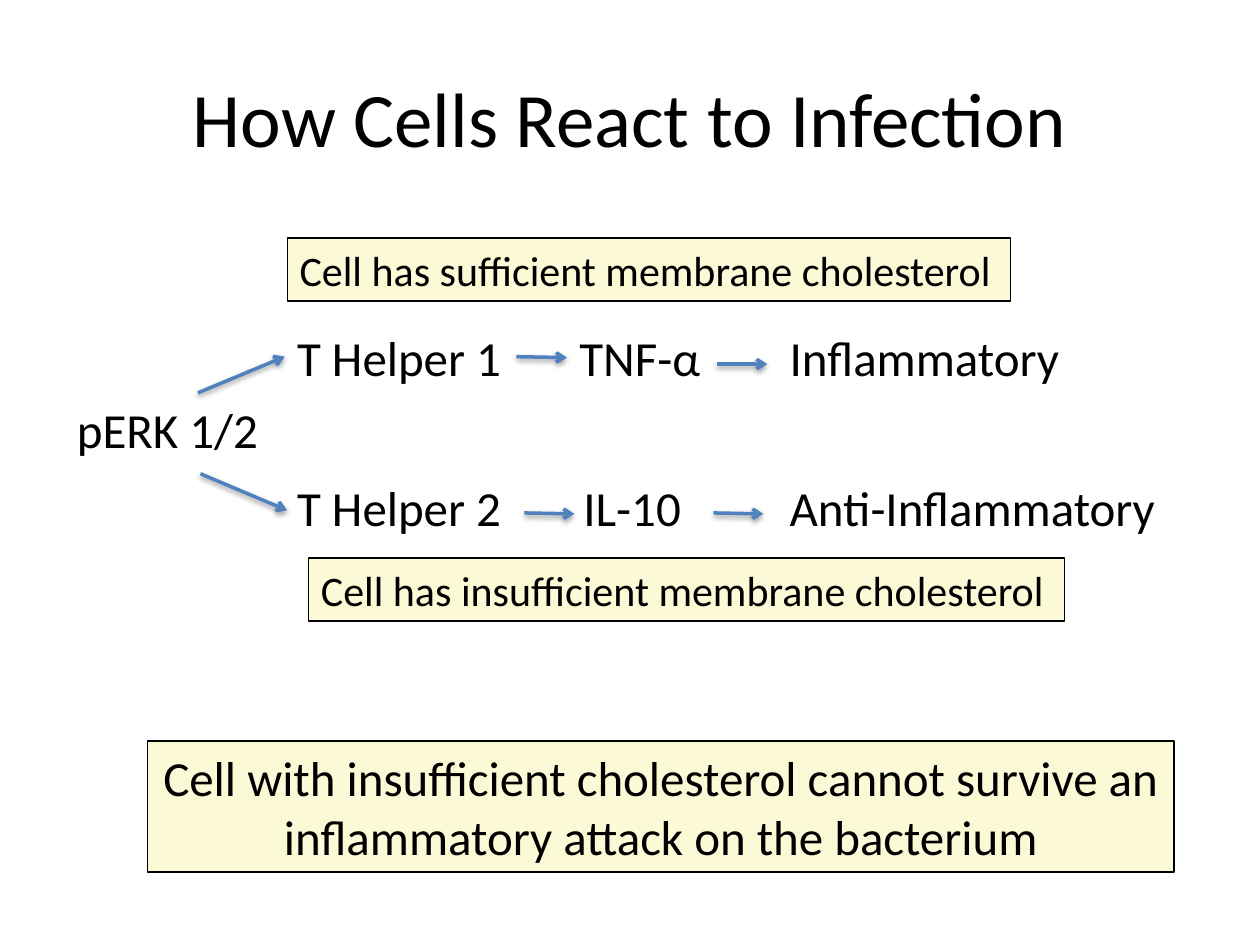
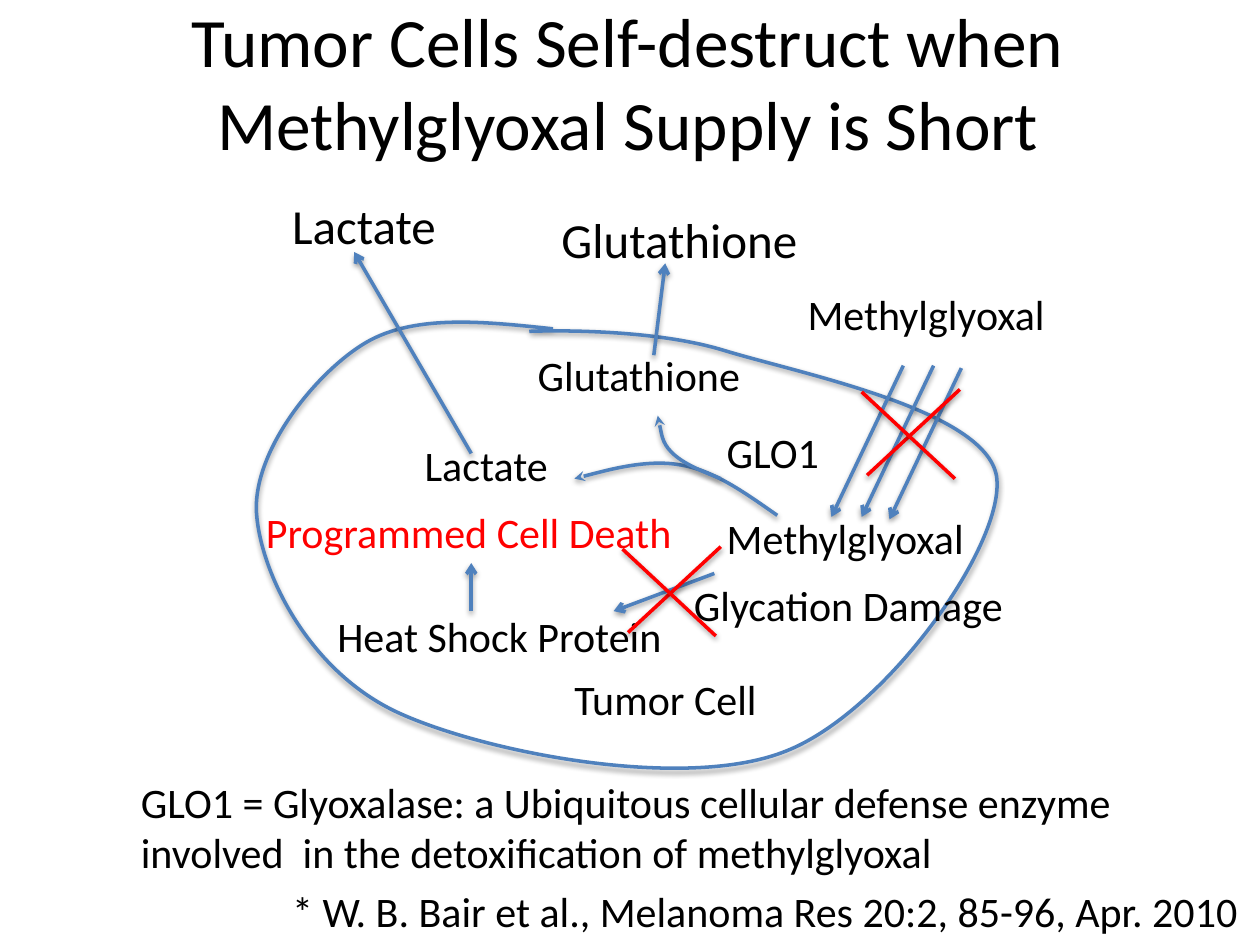
from lxml import etree
from pptx import Presentation
from pptx import util as u
from pptx.dml.color import RGBColor
from pptx.enum import shapes, text
from pptx.oxml.ns import qn

COLOURS = {"text": "000000", "stroke": "4F81BD", "alert": "FF0000", "note": "FCF9D6"}
FONT = "Calibri"
LABEL, LARGE = 24, 28
LABEL_HEIGHT, LARGE_HEIGHT = 1.27, 1.45


def write(frame, words, size, colour="text", align=text.PP_ALIGN.LEFT):
    """Add words as one formatted run to the first paragraph of a text frame."""
    paragraph = frame.paragraphs[0]
    paragraph.alignment = align
    run = paragraph.add_run()
    run.text = words
    run.font.name = FONT
    run.font.size = u.Pt(size)
    run.font.color.rgb = RGBColor.from_string(COLOURS[colour])
    return run


def style_stroke(shape, colour="stroke", arrowhead=None):
    """Format a connector or curve; its soft shadow comes from the theme."""
    shape.line.color.rgb = RGBColor.from_string(COLOURS[colour])
    shape.line.width = u.Pt(2)
    shape.element.find(".//" + qn("a:effectRef")).set("idx", "1")
    if arrowhead:
        outline = shape.element.find(".//" + qn("a:ln"))
        etree.SubElement(outline, qn("a:tailEnd"), type=arrowhead)


presentation = Presentation()
presentation.slide_width, presentation.slide_height = u.Cm(25.4), u.Cm(19.05)
title_only = presentation.slide_layouts[5]

# Titles: words, size, (left, top, width, height)
titles = [
    ("How Cells React to Infection", 44, (1.27, 0.76, 22.86, 3.18)),
    ("Tumor Cells Self-destruct when Methylglyoxal Supply is Short", 39.6,
     (2.59, 0.05, 20.14, 3.18)),
]
for words, size, box in titles:
    title = presentation.slides.add_slide(title_only).shapes.title
    title.left, title.top, title.width, title.height = map(u.Cm, box)
    title.text_frame.vertical_anchor = text.MSO_ANCHOR.MIDDLE
    write(title.text_frame, words, size, align=text.PP_ALIGN.CENTER)
infection, tumor = presentation.slides

# Membrane and enzyme curves: a start, then three Bézier points per segment
curves = [
    (None, [(11.15, 6.63),
            (9.73, 6.48), (8.28, 6.32), (7.29, 6.96),
            (6.3, 7.59), (5.03, 9.19), (5.18, 10.44),
            (5.31, 11.68), (6.3, 13.61), (8.1, 14.4),
            (9.88, 15.19), (13.84, 15.95), (15.85, 15.14),
            (17.86, 14.35), (20.29, 10.95), (20.09, 9.6),
            (19.86, 8.26), (16.15, 7.54), (14.58, 7.06),
            (13, 6.58), (10.67, 6.68), (10.67, 6.68)]),
    ("stealth", [(15.67, 10.39),
                 (15.01, 9.93), (14.38, 9.47), (13.69, 9.37),
                 (13, 9.25), (11.58, 9.65), (11.58, 9.65)]),
    ("stealth", [(14.53, 9.65),
                 (14.15, 9.5), (13.77, 9.35), (13.54, 9.12),
                 (13.34, 8.92), (13.26, 8.38), (13.26, 8.38)]),
]
for arrowhead, points in curves:
    start, *controls = [(u.Cm(x), u.Cm(y)) for x, y in points]
    builder = tumor.shapes.build_freeform(*start)
    builder.add_line_segments(controls, close=False)
    curve = builder.convert_to_shape()
    curve.fill.background()
    style_stroke(curve, arrowhead=arrowhead)
    outline_path = curve.element.find(".//" + qn("a:path"))
    segments = outline_path.findall(qn("a:lnTo"))
    for first in range(0, len(segments), 3):
        bezier = etree.SubElement(outline_path, qn("a:cubicBezTo"))
        for segment in segments[first:first + 3]:
            bezier.append(segment[0])
            outline_path.remove(segment)

# Free labels: slide, words, left, top, width, size, colour
top_row, bottom_row = 6.48, 9.5
labels = [
    (infection, "TNF-α", 11.43, top_row, 2.97, LARGE, "text"),
    (infection, "IL-10", 11.51, bottom_row, 2.49, LARGE, "text"),
    (infection, "T Helper 1", 5.74, top_row, 4.67, LARGE, "text"),
    (infection, "T Helper 2", 5.74, bottom_row, 4.67, LARGE, "text"),
    (infection, "Inflammatory", 15.67, top_row, 5.99, LARGE, "text"),
    (infection, "Anti-Inflammatory", 15.67, bottom_row, 8, LARGE, "text"),
    (infection, "pERK 1/2", 1.3, 7.92, 4.22, LARGE, "text"),
    (tumor, "Lactate", 8.31, 8.74, 3.02, LABEL, "text"),
    (tumor, "Tumor Cell", 11.33, 13.46, 4.7, LABEL, "text"),
    (tumor, "Methylglyoxal", 16.03, 5.69, 5.38, LABEL, "text"),
    (tumor, "Heat Shock Protein", 6.55, 12.19, 7.11, LABEL, "text"),
    (tumor, "Methylglyoxal", 14.4, 10.21, 5.38, LABEL, "text"),
    (tumor, "Glutathione", 10.59, 6.93, 5.18, LABEL, "text"),
    (tumor, "Lactate", 5.64, 3.81, 3.45, LARGE, "text"),
    (tumor, "Glutathione", 11.07, 4.09, 5.69, LARGE, "text"),
    (tumor, "Programmed Cell Death", 5.11, 10.08, 8.76, LABEL, "alert"),
    (tumor, "GLO1", 14.4, 8.48, 2.69, LABEL, "text"),
    (tumor, "Glycation Damage", 13.74, 11.56, 7.01, LABEL, "text"),
]
for slide, words, left, top, width, size, colour in labels:
    height = LARGE_HEIGHT if size == LARGE else LABEL_HEIGHT
    label = slide.shapes.add_textbox(*map(u.Cm, (left, top, width, height)))
    # Labels that fill their box tightly must stay on one line
    label.text_frame.word_wrap = slide is tumor and width in (4.7, 5.38, 5.18, 5.69, 2.69, 7.01)
    write(label.text_frame, words, size, colour)

# Framed notes
notes = [
    ("Cell has sufficient membrane cholesterol", LABEL, text.PP_ALIGN.LEFT,
     (5.79, 4.8, 14.58, 1.27)),
    ("Cell has insufficient membrane cholesterol", LABEL, text.PP_ALIGN.LEFT,
     (6.22, 11.25, 15.24, 1.27)),
    ("Cell with insufficient cholesterol cannot survive an inflammatory attack "
     "on the bacterium", LARGE, text.PP_ALIGN.CENTER, (2.97, 14.94, 20.7, 2.64)),
]
for words, size, align, box in notes:
    note = infection.shapes.add_textbox(*map(u.Cm, box))
    note.fill.solid()
    note.fill.fore_color.rgb = RGBColor.from_string(COLOURS["note"])
    note.line.color.rgb = RGBColor.from_string(COLOURS["text"])
    note.line.width = u.Pt(0.75)
    note.text_frame.word_wrap = True
    write(note.text_frame, words, size, align=align)

# Arrows: start x, start y, end x, end y
infection_arrows = [
    (3.99, 7.92, 5.74, 7.19), (4.04, 9.55, 5.79, 10.29),
    (10.41, 7.19, 11.43, 7.21), (14.45, 7.34, 15.47, 7.34),
    (14.38, 10.34, 15.39, 10.36), (10.57, 10.34, 11.58, 10.36),
]
tumor_arrows = [
    (14.4, 11.56, 12.37, 12.32), (13.18, 7.16, 13.41, 5.31),
    (9.5, 9.14, 7.14, 5.08), (9.5, 12.32, 9.5, 11.35),
]
for x, y in [(18.21, 7.37), (18.82, 7.37), (19.38, 7.42)]:
    tumor_arrows.append((x, y, x - 1.45, y + 3.05))
for slide, arrows in [(infection, infection_arrows), (tumor, tumor_arrows)]:
    for ends in arrows:
        arrow = slide.shapes.add_connector(shapes.MSO_CONNECTOR.STRAIGHT, *map(u.Cm, ends))
        style_stroke(arrow, arrowhead="arrow")

# Definition and citation
definition = tumor.shapes.add_textbox(*map(u.Cm, (2.59, 15.52, 20.14, 2.31)))
definition.text_frame.word_wrap = True
write(definition.text_frame, "GLO1 = Glyoxalase: a Ubiquitous cellular defense enzyme "
      "involved  in the detoxification of methylglyoxal", LABEL)

citation = tumor.shapes.add_textbox(*map(u.Cm, (5.64, 17.73, 19.76, LABEL_HEIGHT)))
citation.text_frame.word_wrap = False
star = write(citation.text_frame, "*", LABEL)
write(citation.text_frame, " W. B. Bair et al., Melanoma Res 20:2, 85-96, Apr. 2010", LABEL)
star_outline = etree.Element(qn("a:ln"), w=str(u.Pt(0.75)))
star_fill = etree.SubElement(star_outline, qn("a:solidFill"))
etree.SubElement(star_fill, qn("a:srgbClr"), val=COLOURS["alert"])
star.font.fill  # the outline has to come before the fill
star.font.color.rgb = RGBColor.from_string(COLOURS["text"])
citation.element.find(".//" + qn("a:rPr")).insert(0, star_outline)

# Crosses over the blocked supply and the blocked damage
for shift_x, shift_y in [(0, 0), (-4.82, 3.17)]:
    cross = tumor.shapes.add_group_shape()
    for x1, y1, x2, y2 in [(17.48, 9.58, 19.35, 7.85), (19.25, 9.65, 17.37, 7.9)]:
        ends = (x1 + shift_x, y1 + shift_y, x2 + shift_x, y2 + shift_y)
        stroke = cross.shapes.add_connector(shapes.MSO_CONNECTOR.STRAIGHT, *map(u.Cm, ends))
        style_stroke(stroke, "alert")

presentation.save("out.pptx")
